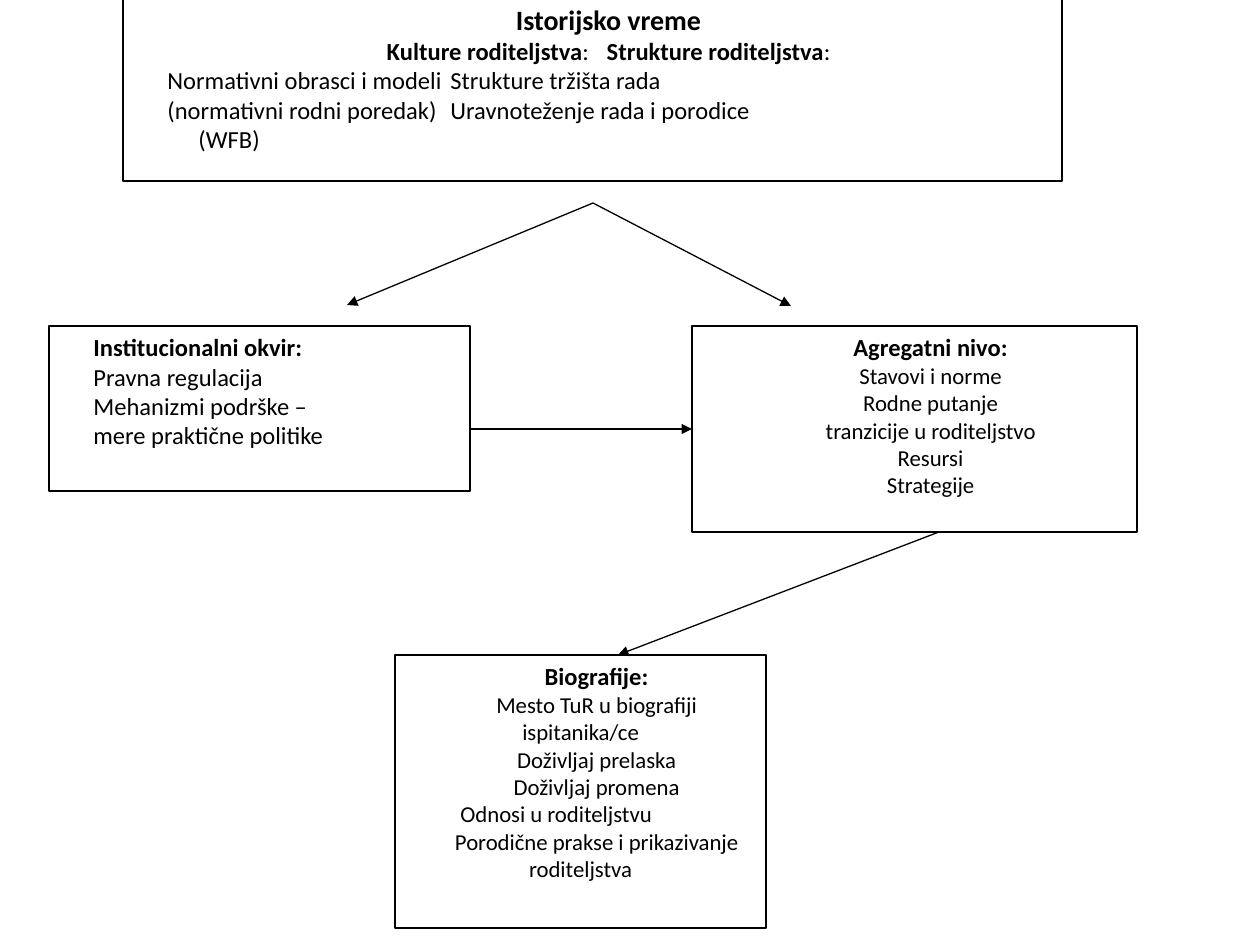
from dataclasses import dataclass

from lxml import etree
from pptx import Presentation
from pptx.dml.color import RGBColor
from pptx.enum.shapes import MSO_CONNECTOR, MSO_SHAPE
from pptx.enum.text import MSO_ANCHOR, PP_ALIGN
from pptx.oxml.ns import qn
from pptx.util import Pt

RECTANGLE = MSO_SHAPE.RECTANGLE
STRAIGHT = MSO_CONNECTOR.STRAIGHT
TOP = MSO_ANCHOR.TOP
CENTER, LEFT, JUSTIFY = PP_ALIGN.CENTER, PP_ALIGN.LEFT, PP_ALIGN.JUSTIFY
LEFT_SIDE = 1
EMU_PER_PX = 914400 / 126


@dataclass(frozen=True)
class Theme:
    font: str = "Calibri"
    ink: RGBColor = RGBColor(0, 0, 0)
    paper: RGBColor = RGBColor(255, 255, 255)
    title: int = 16
    body: int = 14
    small: int = 13
    line: float = 0.75


THEME = Theme()
SLIDE_SIZE = (1260, 945)
FIRST_LINE_INDENT = 32
EXTRA_INDENT = 21
RIGHT_COLUMN_CENTER = 682


def heading(text, align=CENTER, size=THEME.body):
    return [(text, True)], size, align, FIRST_LINE_INDENT


def detail(text, align=CENTER, size=THEME.small, indent=FIRST_LINE_INDENT):
    return [(text, False)], size, align, indent


CULTURES_AND_STRUCTURES = [
    ("Kulture roditeljstva", True), (":\t", False),
    ("Strukture roditeljstva", True), (":", False),
]

BOXES = {
    "historical_time": ((123, -4, 939, 185), [
        heading("Istorijsko vreme", size=THEME.title),
        (CULTURES_AND_STRUCTURES, THEME.body, CENTER, FIRST_LINE_INDENT),
        detail("Normativni obrasci i modeli\tStrukture tržišta rada", LEFT, THEME.body),
        detail("(normativni rodni poredak)\tUravnoteženje rada i porodice", LEFT, THEME.body),
        detail("\t(WFB)", LEFT, THEME.body),
    ]),
    "institutions": ((49, 326, 421, 165), [
        heading("Institucionalni okvir:", JUSTIFY),
        detail("Pravna regulacija", JUSTIFY, THEME.body),
        detail("Mehanizmi podrške –", JUSTIFY, THEME.body),
        detail("mere praktične politike", LEFT, THEME.body),
    ]),
    "aggregate": ((692, 326, 445, 206), [
        heading("Agregatni nivo:"),
        detail("Stavovi i norme"),
        detail("Rodne putanje"),
        detail("tranzicije u roditeljstvo"),
        detail("Resursi"),
        detail("Strategije"),
    ]),
    "biographies": ((395, 655, 371, 273), [
        heading("Biografije:"),
        detail("Mesto TuR u biografiji ispitanika/ce"),
        detail("Doživljaj prelaska"),
        detail("Doživljaj promena"),
        detail("Odnosi u roditeljstvu", LEFT, indent=FIRST_LINE_INDENT + EXTRA_INDENT),
        detail("Porodične prakse i prikazivanje roditeljstva"),
    ]),
}

ARROWS = [
    ((593, 203), (347, 305), None),
    ((593, 203), (791, 306), None),
    ((470, 429), (692, 429), ("aggregate", LEFT_SIDE)),
    ((939, 532), (618, 655), None),
]


def px(value):
    return round(value * EMU_PER_PX)


def write_line(paragraph, pieces, size, align, indent):
    paragraph.alignment = align
    properties = paragraph._p.get_or_add_pPr()
    properties.set("marL", "0")
    properties.set("indent", str(px(indent)))
    for text, bold in pieces:
        run = paragraph.add_run()
        run.text = text
        run.font.name = THEME.font
        run.font.size = Pt(size)
        run.font.bold = bold
        run.font.color.rgb = THEME.ink
    if align == LEFT and "\t" in pieces[0][0]:
        tabs = etree.SubElement(properties, qn("a:tabLst"))
        etree.SubElement(tabs, qn("a:tab"), pos=str(px(RIGHT_COLUMN_CENTER)), algn="ctr")


def add_box(slide, bounds, lines):
    box = slide.shapes.add_shape(RECTANGLE, *map(px, bounds))
    box.shadow.inherit = False
    box.fill.solid()
    box.fill.fore_color.rgb = THEME.paper
    box.line.color.rgb = THEME.ink
    box.line.width = Pt(THEME.line)
    frame = box.text_frame
    frame.word_wrap = True
    frame.vertical_anchor = TOP
    for number, line in enumerate(lines):
        paragraph = frame.add_paragraph() if number else frame.paragraphs[0]
        write_line(paragraph, *line)
    return box


def add_arrow(slide, start, end, target, boxes):
    arrow = slide.shapes.add_connector(STRAIGHT, *map(px, start + end))
    if target:
        name, side = target
        arrow.end_connect(boxes[name], side)
    arrow.line.color.rgb = THEME.ink
    arrow.line.width = Pt(THEME.line)
    etree.SubElement(arrow.line._get_or_add_ln(), qn("a:tailEnd"), type="triangle")
    etree.SubElement(arrow._element.spPr, qn("a:effectLst"))


def main():
    deck = Presentation()
    deck.slide_width, deck.slide_height = map(px, SLIDE_SIZE)
    slide = deck.slides.add_slide(deck.slide_layouts[6])
    boxes = {name: add_box(slide, *content) for name, content in BOXES.items()}
    for start, end, target in ARROWS:
        add_arrow(slide, start, end, target, boxes)
    deck.save("out.pptx")


if __name__ == "__main__":
    main()
